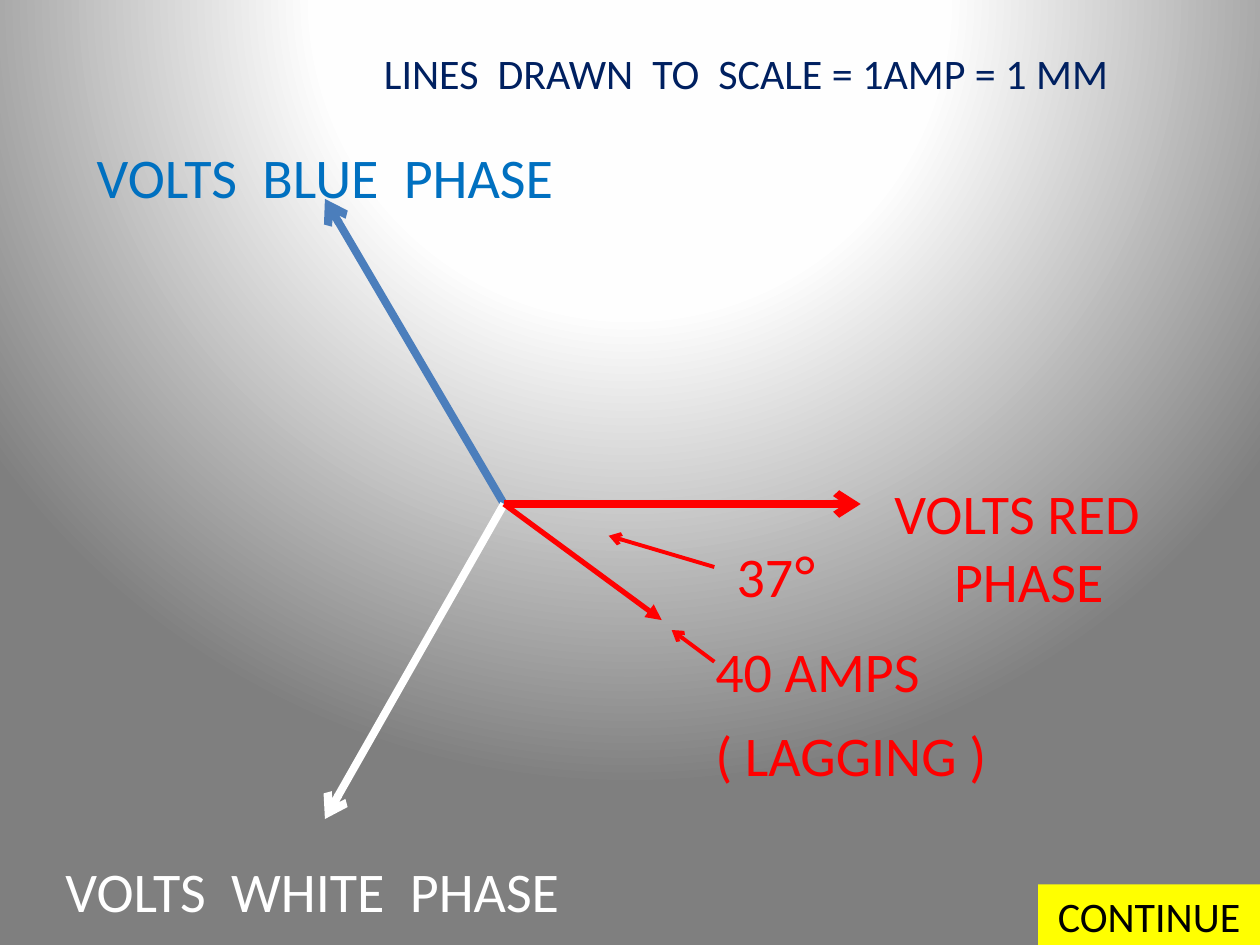
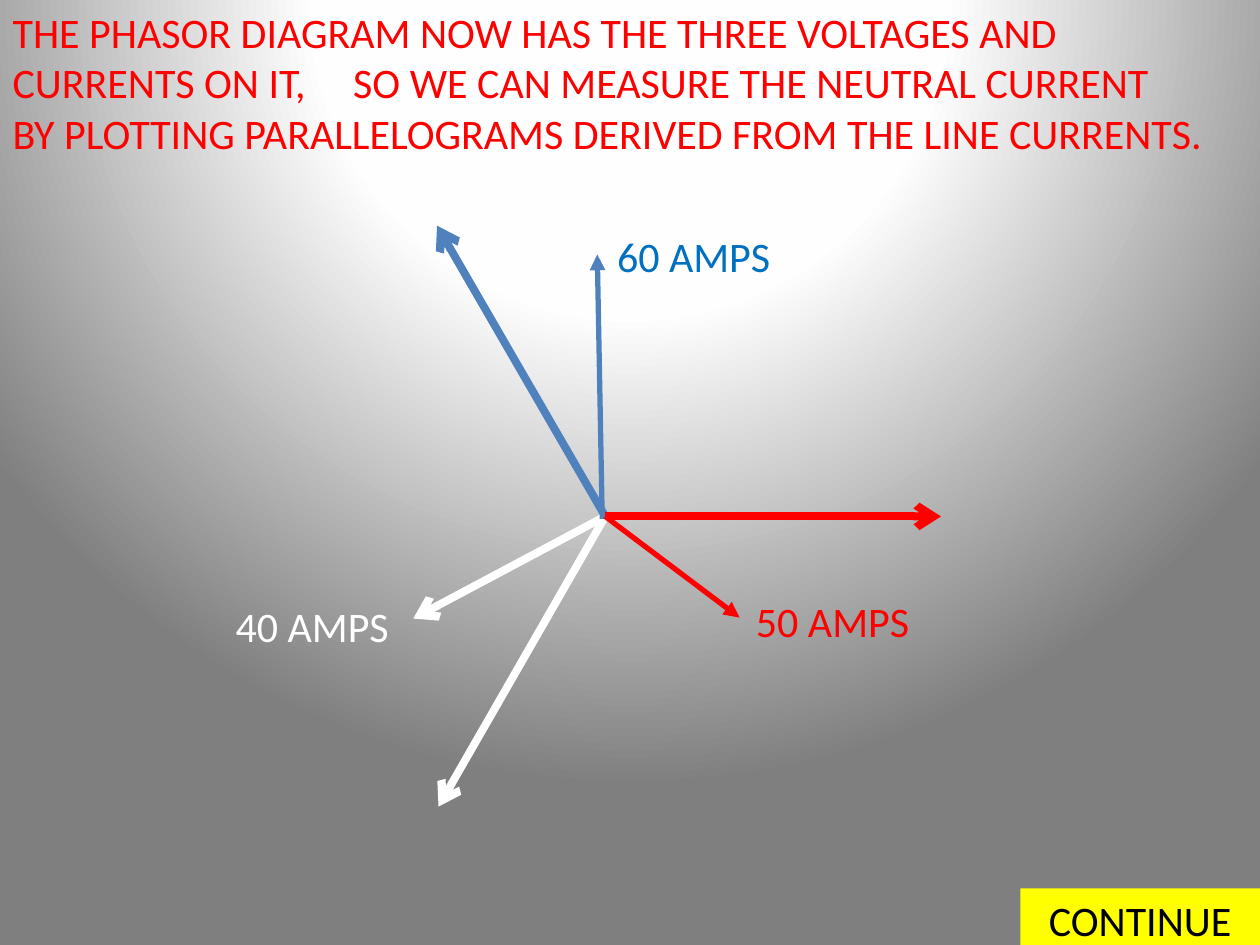
from lxml import etree
from pptx import Presentation
from pptx import oxml
from pptx.dml.color import RGBColor
from pptx.enum import shapes, text
from pptx.oxml import ns
from pptx.util import Cm, Pt

RED = RGBColor(0xFF, 0x00, 0x00)
WHITE = RGBColor(0xFF, 0xFF, 0xFF)
BLACK = RGBColor(0x00, 0x00, 0x00)
YELLOW = RGBColor(0xFF, 0xFF, 0x00)
NAVY = RGBColor(0x00, 0x20, 0x60)
BLUE_TEXT = RGBColor(0x00, 0x70, 0xC0)
BLUE_VOLTS = RGBColor(0x4B, 0x7E, 0xBC)
BLUE_LINE = RGBColor(0x4F, 0x81, 0xBD)
LEFT, CENTER = text.PP_ALIGN.LEFT, text.PP_ALIGN.CENTER

SPOTLIGHT = f"""<a:gradFill {ns.nsdecls('a')} rotWithShape="1">
  <a:gsLst>
    <a:gs pos="0"><a:srgbClr val="FFFFFF"/></a:gs>
    <a:gs pos="40000"><a:srgbClr val="FEFEFE"/></a:gs>
    <a:gs pos="100000"><a:srgbClr val="7F7F7F"/></a:gs>
  </a:gsLst>
  <a:path path="circle">
    <a:fillToRect l="50000" t="-80000" r="50000" b="180000"/>
  </a:path>
</a:gradFill>"""


def write(box, words, size, colour, align=LEFT):
    """Fill a box with wrapped text in the deck's style."""
    frame = box.text_frame
    frame.text = words
    frame.word_wrap = True
    frame.auto_size = text.MSO_AUTO_SIZE.SHAPE_TO_FIT_TEXT
    frame.vertical_anchor = text.MSO_ANCHOR.TOP
    for para in frame.paragraphs:
        para.alignment = align
        for span in para.runs:
            span.font.name = "Calibri"
            span.font.size = Pt(size)
            span.font.color.rgb = colour
    return frame


def add_arrow(page, start, tip, colour, width, head):
    arrow = page.shapes.add_connector(
        shapes.MSO_CONNECTOR.STRAIGHT, *map(Cm, start + tip))
    arrow.line.color.rgb = colour
    arrow.line.width = Pt(width)
    line = arrow.line._get_or_add_ln()
    etree.SubElement(line, ns.qn("a:tailEnd"), type=head)
    etree.SubElement(arrow._element.spPr, ns.qn("a:effectLst"))


deck = Presentation()
deck.slide_width, deck.slide_height = Cm(25.4), Cm(19.05)

# Shared background
fill = deck.slide_master.background.fill
fill.gradient()
plain_gradient = deck.slide_master._element.find(".//" + ns.qn("a:gradFill"))
plain_gradient.getparent().replace(plain_gradient, oxml.parse_xml(SPOTLIGHT))

# Places are in centimetres: boxes as left, top, width, height
scale_centre = (10.16, 10.16)
neutral_centre = (12.2, 10.41)
pages = [
    {
        "title": ("LINES  DRAWN  TO  SCALE = 1AMP = 1 MM",
                  (6.15, 0.84, 17.78, 1.27), NAVY, CENTER),
        "arrows": [
            (scale_centre, (6.55, 4.01), BLUE_VOLTS, 4.5, "arrow"),
            (scale_centre, (17.35, 10.16), RED, 4.5, "arrow"),
            (scale_centre, (6.55, 16.51), WHITE, 4.5, "arrow"),
            (scale_centre, (13.34, 12.5), RED, 3, "triangle"),
            ((14.4, 11.43), (12.27, 10.8), RED, 2.25, "arrow"),
            ((14.4, 13.34), (13.54, 12.7), RED, 2.25, "arrow"),
        ],
        "label_size": 32,
        "labels": [
            ("VOLTS RED\nPHASE", (17.78, 9.53, 5.92, 3), RED),
            ("VOLTS  BLUE  PHASE", (1.7, 2.74, 10.16, 1.63), BLUE_TEXT),
            ("VOLTS  WHITE  PHASE", (1.07, 17.15, 13.13, 1.63), WHITE),
            ("37", (14.6, 10.8, 2.54, 1.63), RED),
            ("40 AMPS", (14.17, 12.7, 4.67, 1.63), RED),
            ("( LAGGING )", (14.17, 14.4, 6.05, 1.63), RED),
        ],
        "button": (20.93, 17.83, 4.47, 1.27),
    },
    {
        "title": ("THE PHASOR DIAGRAM NOW HAS THE THREE VOLTAGES AND CURRENTS "
                  "ON IT,     SO WE CAN MEASURE THE NEUTRAL CURRENT\n"
                  "BY PLOTTING PARALLELOGRAMS DERIVED FROM THE LINE CURRENTS.",
                  (0, 0, 25.4, 3.33), RED, LEFT),
        "arrows": [
            (neutral_centre, (8.81, 4.55), BLUE_LINE, 4.5, "arrow"),
            (neutral_centre, (18.97, 10.41), RED, 4.5, "arrow"),
            (neutral_centre, (8.84, 16.26), WHITE, 4.5, "arrow"),
            (neutral_centre, (8.33, 12.47), WHITE, 4.5, "arrow"),
            ((12.14, 10.46), (12.04, 5.13), BLUE_LINE, 3, "triangle"),
            (neutral_centre, (14.91, 12.45), RED, 3, "triangle"),
        ],
        "label_size": 24,
        "labels": [
            ("60 AMPS", (12.19, 4.52, 4.6, 1.27), BLUE_TEXT),
            ("50 AMPS", (14.99, 11.89, 4.22, 1.27), RED),
            ("40 AMPS", (4.5, 11.99, 3.81, 1.27), WHITE),
        ],
        "button": (20.57, 17.91, 4.83, 1.27),
    },
]

for content in pages:
    page = deck.slides.add_slide(deck.slide_layouts[5])

    words, place, colour, align = content["title"]
    title = page.shapes.title
    title.left, title.top, title.width, title.height = map(Cm, place)
    write(title, words, 24, colour, align)

    for arrow in content["arrows"]:
        add_arrow(page, *arrow)

    for words, place, colour in content["labels"]:
        box = page.shapes.add_textbox(*map(Cm, place))
        frame = write(box, words, content["label_size"], colour)
        if words.startswith("VOLTS RED"):
            frame.paragraphs[1].alignment = CENTER
        elif words == "37":
            degree = frame.paragraphs[0].add_run()
            degree.text = "°"
            degree.font.name = "Lato"
            degree.font.size = Pt(content["label_size"])
            degree.font.color.rgb = colour

    button = page.shapes.add_shape(
        shapes.MSO_SHAPE.RECTANGLE, *map(Cm, content["button"]))
    button.shadow.inherit = False
    button.fill.solid()
    button.fill.fore_color.rgb = YELLOW
    button.line.fill.background()
    write(button, "CONTINUE", 24, BLACK, CENTER)

deck.save("out.pptx")
